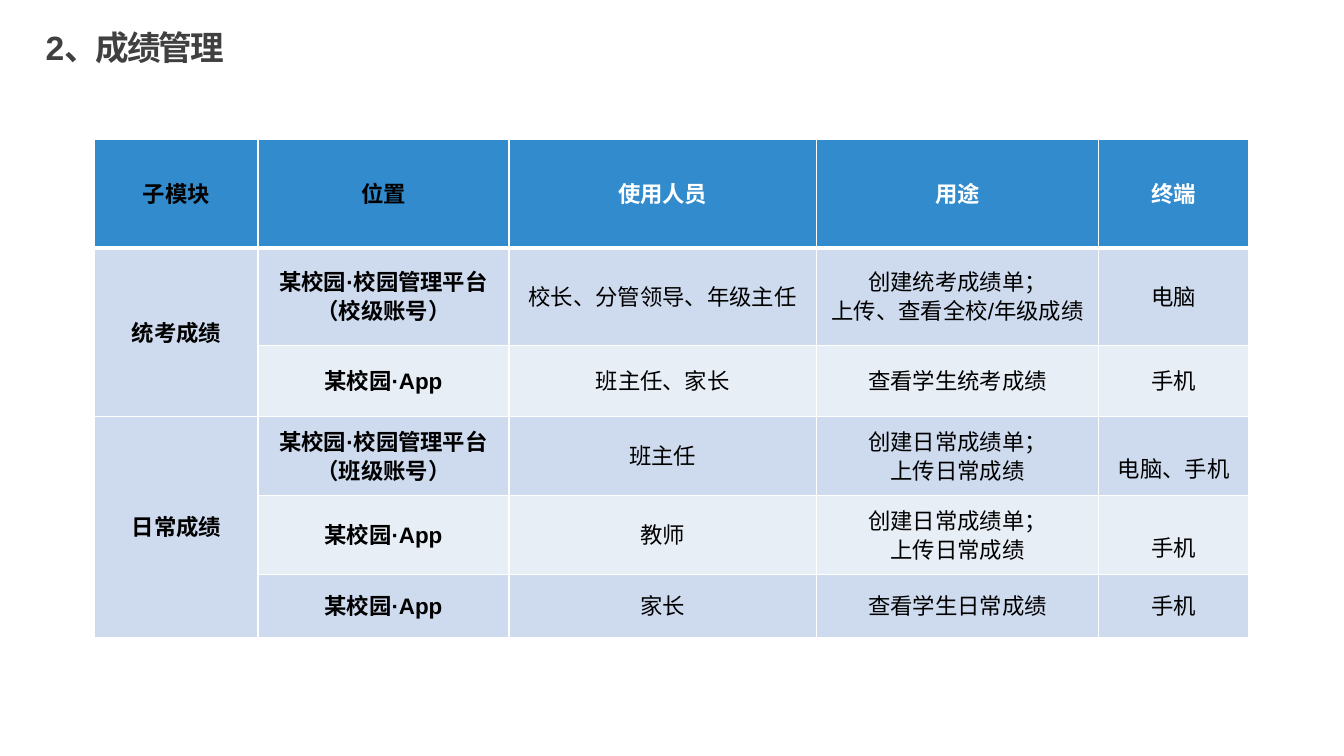
"""Build the score management slide: a title over a table of modules, users and devices."""
import pptx
import pptx.dml.color
import pptx.enum.text
import pptx.util
from lxml import etree

Pt = pptx.util.Pt
MIDDLE = pptx.enum.text.MSO_ANCHOR.MIDDLE
CENTER = pptx.enum.text.PP_ALIGN.CENTER
DRAWING = "{http://schemas.openxmlformats.org/drawingml/2006/main}"


def color(hex_code):
    return pptx.dml.color.RGBColor.from_string(hex_code)


def write(frame, text, size=16, bold=False, ink="000000", line_spacing=0.9, tracking=0):
    for index, line in enumerate(text.split("\n")):
        paragraph = frame.add_paragraph() if index else frame.paragraphs[0]
        paragraph.alignment = CENTER
        paragraph.line_spacing = line_spacing
        paragraph.space_before = Pt(0)
        run = paragraph.add_run()
        run.text = line
        run.font.name = "Arial"
        run.font.size = Pt(size)
        run.font.bold = bold
        run.font.color.rgb = color(ink)
        if tracking:
            run.font._element.set("spc", str(int(tracking * 100)))


deck = pptx.Presentation()
deck.slide_width, deck.slide_height = Pt(960), Pt(540)
slide = deck.slides.add_slide(deck.slide_layouts[5])

heading = slide.shapes.title
heading.left, heading.top, heading.width, heading.height = Pt(12.2), Pt(12.2), Pt(168), Pt(40.3)
heading.text_frame.auto_size = pptx.enum.text.MSO_AUTO_SIZE.NONE
heading.text_frame.vertical_anchor = MIDDLE
write(heading.text_frame, "2、成绩管理", size=24, bold=True, ink="404040",
      line_spacing=1.1, tracking=-1.5)

platform, app = "某校园·校园管理平台", "某校园·App"
daily_entry = "创建日常成绩单；\n上传日常成绩"
modules = [
    ["子模块", "位置", "使用人员", "用途", "终端"],
    ["统考成绩", platform + "（校级账号）", "校长、分管领导、年级主任",
     "创建统考成绩单；\n上传、查看全校/年级成绩", "电脑"],
    ["", app, "班主任、家长", "查看学生统考成绩", "手机"],
    ["日常成绩", platform + "（班级账号）", "班主任", daily_entry, "电脑、手机"],
    ["", app, "教师", daily_entry, "手机"],
    ["", app, "家长", "查看学生日常成绩", "手机"],
]
column_widths = [116.6, 179.3, 219.6, 201.6, 107.3]
row_heights = [77.8, 54.7, 51.1, 56.2, 56.2, 45.4]
lowered_devices = [(3, 4), (4, 4)]

grid = slide.shapes.add_table(
    len(modules), len(column_widths), Pt(67.7), Pt(99.4),
    Pt(sum(column_widths)), Pt(sum(row_heights))).table
for column, width in zip(grid.columns, column_widths):
    column.width = Pt(width)
for row, height in zip(grid.rows, row_heights):
    row.height = Pt(height)
for first, last in [(1, 2), (3, 5)]:
    grid.cell(first, 0).merge(grid.cell(last, 0))

for r, entries in enumerate(modules):
    for c, entry in enumerate(entries):
        cell = grid.cell(r, c)
        cell.vertical_anchor = MIDDLE
        if (r, c) in lowered_devices:
            cell.margin_top = Pt(22)
        if entry:
            write(cell.text_frame, entry, bold=r == 0 or c < 2,
                  ink="FFFFFF" if r == 0 and c > 1 else "000000")
        cell.fill.solid()
        band = "CEDAED" if r % 2 or c == 0 else "E8EEF6"
        cell.fill.fore_color.rgb = color(band if r else "328BCD")
        edges = {"lnL": 1, "lnR": 1, "lnT": 3 if r == 1 else 1, "lnB": 1 if r else 3}
        for position, (edge, weight) in enumerate(edges.items()):
            border = etree.Element(DRAWING + edge, w=str(Pt(weight)))
            paint = etree.SubElement(border, DRAWING + "solidFill")
            etree.SubElement(paint, DRAWING + "srgbClr", val="FFFFFF")
            cell._tc.get_or_add_tcPr().insert(position, border)

deck.save("out.pptx")
